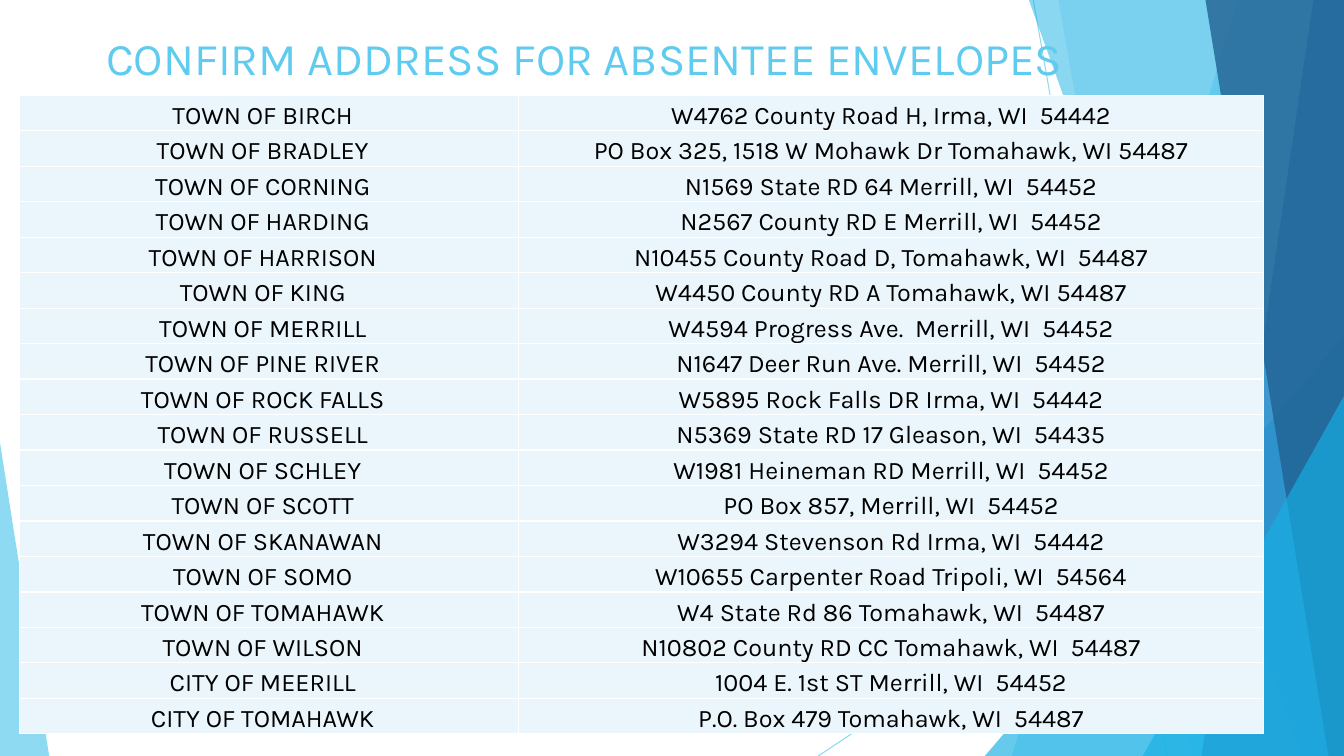
import pptx
import pptx.dml.color
import pptx.enum.shapes
import pptx.enum.text
import pptx.oxml
import pptx.oxml.ns
import pptx.util
from pptx.util import Cm

SKY = pptx.dml.color.RGBColor(0x5F, 0xCB, 0xEF)
CYAN = pptx.dml.color.RGBColor(0x17, 0xB0, 0xE4)
BLUE = pptx.dml.color.RGBColor(0x2E, 0x83, 0xC3)
NAVY = pptx.dml.color.RGBColor(0x22, 0x62, 0x92)
PALE = pptx.dml.color.RGBColor(0xEA, 0xF6, 0xFC)
BLACK = pptx.dml.color.RGBColor(0, 0, 0)

FONT = "Karla"
WIDTH, HEIGHT = 33.87, 19.05

ADDRESSES = [
    ("TOWN OF BIRCH", "W4762 County Road H, Irma, WI  54442"),
    ("TOWN OF BRADLEY", "PO Box 325, 1518 W Mohawk Dr Tomahawk, WI 54487"),
    ("TOWN OF CORNING", "N1569 State RD 64 Merrill, WI  54452"),
    ("TOWN OF HARDING", "N2567 County RD E Merrill, WI  54452"),
    ("TOWN OF HARRISON", "N10455 County Road D, Tomahawk, WI  54487"),
    ("TOWN OF KING", "W4450 County RD A Tomahawk, WI 54487"),
    ("TOWN OF MERRILL", "W4594 Progress Ave.  Merrill, WI  54452"),
    ("TOWN OF PINE RIVER", "N1647 Deer Run Ave. Merrill, WI  54452"),
    ("TOWN OF ROCK FALLS", "W5895 Rock Falls DR Irma, WI  54442"),
    ("TOWN OF RUSSELL", "N5369 State RD 17 Gleason, WI  54435"),
    ("TOWN OF SCHLEY", "W1981 Heineman RD Merrill, WI  54452"),
    ("TOWN OF SCOTT", "PO Box 857, Merrill, WI  54452"),
    ("TOWN OF SKANAWAN", "W3294 Stevenson Rd Irma, WI  54442"),
    ("TOWN OF SOMO", "W10655 Carpenter Road Tripoli, WI  54564"),
    ("TOWN OF TOMAHAWK", "W4 State Rd 86 Tomahawk, WI  54487"),
    ("TOWN OF WILSON", "N10802 County RD CC Tomahawk, WI  54487"),
    ("CITY OF MEERILL", "1004 E. 1st ST Merrill, WI  54452"),
    ("CITY OF TOMAHAWK", "P.O. Box 479 Tomahawk, WI  54487"),
]


def set_opacity(element, percent):
    """Make the solid colour inside an element partly transparent."""
    color = next(element.iter(pptx.oxml.ns.qn("a:srgbClr")))
    alpha = pptx.oxml.parse_xml(
        f'<a:alpha {pptx.oxml.ns.nsdecls("a")} val="{percent * 1000}"/>')
    color.append(alpha)


def paint(shape, color, opacity):
    shape.shadow.inherit = False
    shape.line.fill.background()
    shape.fill.solid()
    shape.fill.fore_color.rgb = color
    set_opacity(shape.element.spPr, opacity)


def add_ray(page, x1, y1, x2, y2):
    ray = page.shapes.add_connector(
        pptx.enum.shapes.MSO_CONNECTOR.STRAIGHT, Cm(x1), Cm(y1), Cm(x2), Cm(y2))
    ray.line.color.rgb = SKY
    ray.line.width = pptx.util.Pt(0.75)
    set_opacity(ray.element.spPr, 70)
    ray.element.spPr.append(
        pptx.oxml.parse_xml(f'<a:effectLst {pptx.oxml.ns.nsdecls("a")}/>'))


def add_band(page, top_x, bottom_x, color, opacity):
    """Full-height band from a slanted left edge to the right slide edge."""
    builder = page.shapes.build_freeform(Cm(top_x), 0)
    builder.add_line_segments([(Cm(WIDTH), 0), (Cm(WIDTH), Cm(HEIGHT)),
                               (Cm(bottom_x), Cm(HEIGHT))])
    paint(builder.convert_to_shape(), color, opacity)


def add_wedge(page, left, top, width, apex, color, opacity):
    """Triangle standing on the bottom edge; apex 0 is left, 1 is right."""
    wedge = page.shapes.add_shape(
        pptx.enum.shapes.MSO_SHAPE.ISOSCELES_TRIANGLE,
        Cm(left), Cm(top), Cm(width), Cm(HEIGHT - top))
    wedge.adjustments[0] = apex
    paint(wedge, color, opacity)


def write(frame, text, *, size, color):
    para = frame.paragraphs[0]
    para.alignment = pptx.enum.text.PP_ALIGN.CENTER
    span = para.add_run()
    span.text = text
    span.font.name = FONT
    span.font.size = pptx.util.Pt(size)
    span.font.color.rgb = color


def add_title(page, text):
    title = page.shapes.title
    title.left, title.top = Cm(1.88), Cm(0.5)
    title.width, title.height = Cm(25.7), Cm(1.9)
    frame = title.text_frame
    frame.auto_size = pptx.enum.text.MSO_AUTO_SIZE.NONE
    frame.vertical_anchor = pptx.enum.text.MSO_ANCHOR.MIDDLE
    write(frame, text, size=32.4, color=SKY)
    # Bring the title in front of the decoration
    title.element.getparent().append(title.element)


def add_borders(cell):
    properties = cell._tc.get_or_add_tcPr()
    for index, side in enumerate(("lnL", "lnR", "lnT", "lnB")):
        properties.insert(index, pptx.oxml.parse_xml(
            f'<a:{side} {pptx.oxml.ns.nsdecls("a")} w="12700"><a:solidFill>'
            f'<a:srgbClr val="FFFFFF"/></a:solidFill></a:{side}>'))


def add_address_table(page, rows):
    table = page.shapes.add_table(
        len(rows), 2, Cm(0.5), Cm(2.4), Cm(31.34), Cm(16.1)).table
    table.first_row = table.horz_banding = False
    table.columns[0].width, table.columns[1].width = Cm(12.57), Cm(18.77)
    for row, texts in zip(table.rows, rows):
        row.height = Cm(16.1 / len(rows))
        # The names sit slightly left of centre
        for cell, text, right in zip(row.cells, texts, (0.35, 0.02)):
            cell.margin_left, cell.margin_right = Cm(0.02), Cm(right)
            cell.margin_top, cell.margin_bottom = Cm(0.02), 0
            cell.vertical_anchor = pptx.enum.text.MSO_ANCHOR.BOTTOM
            cell.fill.solid()
            cell.fill.fore_color.rgb = PALE
            add_borders(cell)
            write(cell.text_frame, text, size=18, color=BLACK)


def main():
    deck = pptx.Presentation()
    deck.slide_width, deck.slide_height = Cm(WIDTH), Cm(HEIGHT)
    page = deck.slides.add_slide(deck.slide_layouts[5])

    # Blue facets along both edges, back to front
    add_ray(page, 26.04, 0, 29.41, HEIGHT)
    add_ray(page, WIDTH, 10.24, 20.62, HEIGHT)
    add_band(page, 31.19, 25.5, SKY, 36)
    add_band(page, 26.67, 30.05, SKY, 20)
    add_wedge(page, 24.82, 8.46, 9.05, 1, CYAN, 66)
    add_band(page, 25.93, 32.79, CYAN, 50)
    add_band(page, 33.1, 30.28, BLUE, 70)
    add_band(page, 30.38, 33.48, NAVY, 80)
    add_wedge(page, 28.8, 9.98, 5.07, 1, CYAN, 66)
    add_wedge(page, 0, 11.15, 1.24, 0, SKY, 70)

    # Title and addresses
    add_title(page, "CONFIRM ADDRESS FOR ABSENTEE ENVELOPES")
    add_address_table(page, ADDRESSES)
    deck.save("out.pptx")


if __name__ == "__main__":
    main()
